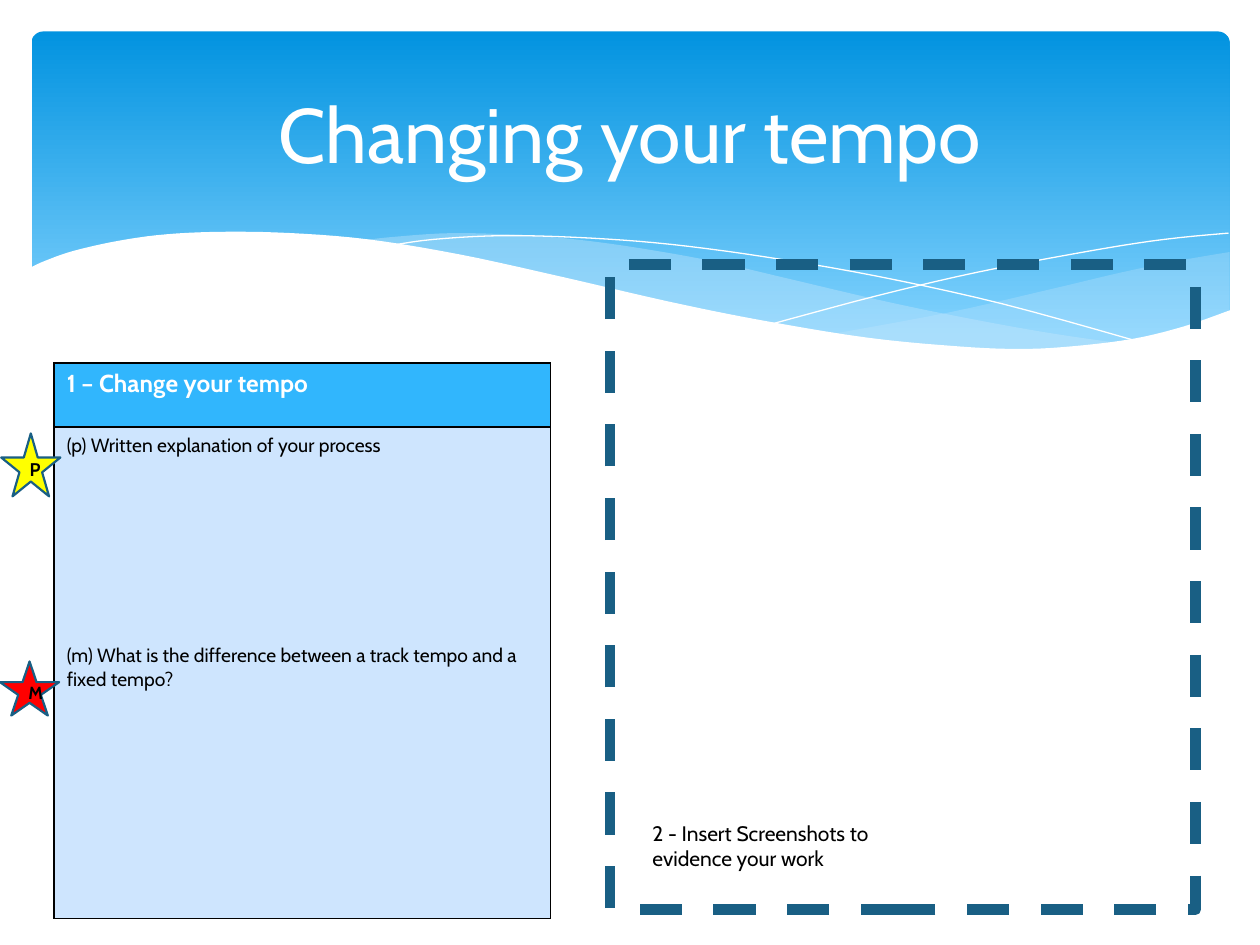
from dataclasses import dataclass
from typing import Optional

from lxml.etree import SubElement
from pptx import Presentation
from pptx.dml.color import RGBColor
from pptx.enum.dml import MSO_LINE
from pptx.enum.shapes import MSO_SHAPE
from pptx.enum.text import MSO_ANCHOR, PP_ALIGN
from pptx.oxml.ns import qn
from pptx.util import Inches, Pt


@dataclass(frozen=True)
class Theme:
    font: str = "Cabin"
    white: str = "FFFFFF"
    black: str = "000000"
    sky_top: str = "0293E0"
    sky_bottom: str = "83D3FE"
    mist: str = "C6E7FC"
    head: str = "31B6FD"
    body: str = "CEE5FE"
    outline: str = "195F84"
    yellow: str = "FFFF00"
    red: str = "FF0000"
    title_size: float = 44
    head_size: float = 14
    note_size: float = 12
    body_size: float = 11


T = Theme()


@dataclass(frozen=True)
class Wave:
    curves: tuple
    fill: Optional[str] = None
    alpha: int = 100


@dataclass(frozen=True)
class Badge:
    label: str
    box: tuple
    fill: str
    size: float


WAVES = (
    Wave((
        ((9.76, 2), (9.35, 2.07), (8.91, 2.16), (8.32, 2.3), (7.53, 2.48), (6.61, 2.65)),
        ((6.61, 2.65), (7.05, 2.71), (7.57, 2.76), (8.14, 2.78), (8.63, 2.75),
         (9.05, 2.69), (9.42, 2.59), (9.76, 2.47)),
    ), T.mist, 29),
    Wave((
        ((8.93, 2.73), (8.37, 2.65), (7.75, 2.54), (7.06, 2.4), (6.29, 2.22), (5.69, 2.08),
         (5.14, 1.98), (4.65, 1.91), (4.2, 1.87), (3.61, 1.85), (3.13, 1.88), (2.86, 1.91)),
        ((2.86, 1.91), (3.42, 1.99), (4.04, 2.11), (4.91, 2.32), (5.66, 2.48), (6.5, 2.64),
         (7.22, 2.74), (7.85, 2.78), (8.38, 2.78), (8.93, 2.73)),
    ), T.mist, 40),
    Wave((((3.09, 1.95), (3.44, 1.9), (4.01, 1.87), (4.69, 1.89), (5.33, 1.94), (6.08, 2.04),
           (6.95, 2.19), (7.95, 2.41), (9.07, 2.72)),)),
    Wave((((6.13, 2.57), (6.95, 2.35), (7.76, 2.16), (8.66, 1.99), (9.24, 1.9), (9.75, 1.85)),)),
    Wave((
        ((9.77, 2.46), (9.4, 2.59), (8.99, 2.69), (8.5, 2.75), (8.09, 2.77), (7.61, 2.75),
         (6.88, 2.68), (6.03, 2.54), (5.29, 2.39), (4.47, 2.2), (3.65, 2.02), (2.92, 1.9),
         (2.3, 1.85), (1.77, 1.84), (1.32, 1.86), (0.95, 1.91), (0.59, 1.99), (0.36, 2.07),
         (0.23, 2.13)),
        ((0.23, 3.29), (9.77, 3.29)),
    ), T.white),
)

BADGES = (
    Badge("M", (0, 5.25, 0.47, 0.43), T.red, 10),
    Badge("P", (0.01, 3.44, 0.47, 0.5), T.yellow, 10.5),
)


def rgb(value: str) -> RGBColor:
    return RGBColor.from_string(value)


def inches(*values: float) -> list:
    return [Inches(v) for v in values]


def format_text(p, size: float, color: str, bold: bool = False) -> None:
    for r in p.runs:
        r.font.name, r.font.size, r.font.bold = T.font, Pt(size), bold
        r.font.color.rgb = rgb(color)


def smooth(pts: tuple, steps: int = 5) -> list:
    out = [pts[0]]
    padded = (pts[0], *pts, pts[-1])
    for a, b, c, d in zip(padded, padded[1:], padded[2:], padded[3:]):
        for i in range(1, steps + 1):
            t = i / steps
            out.append(tuple(
                q + t / 2 * (r - p + t * (2 * p - 5 * q + 4 * r - u + t * (3 * q - p - 3 * r + u)))
                for p, q, r, u in zip(a, b, c, d)))
    return out


def add_wave(s, wave: Wave) -> None:
    pts = [inches(*pt) for curve in wave.curves for pt in smooth(curve)]
    builder = s.shapes.build_freeform(*pts[0])
    builder.add_line_segments(pts[1:], close=wave.fill is not None)
    sp = builder.convert_to_shape()
    sp.shadow.inherit = False
    if wave.fill is None:
        sp.fill.background()
        sp.line.color.rgb = rgb(T.white)
        sp.line.width = Pt(0)
        return
    sp.fill.solid()
    sp.fill.fore_color.rgb = rgb(wave.fill)
    sp.line.fill.background()
    if wave.alpha < 100:
        color = sp.element.spPr.find(qn("a:solidFill"))[0]
        SubElement(color, qn("a:alpha"), val=str(wave.alpha * 1000))


def add_banner(s) -> None:
    sp = s.shapes.add_shape(MSO_SHAPE.ROUNDED_RECTANGLE, *inches(0.25, 0.25, 9.51, 2.7))
    sp.adjustments[0] = 0.034
    sp.shadow.inherit = False
    sp.line.fill.background()
    sp.fill.gradient()
    sp.fill.gradient_angle = 270
    for stop, color, pos in zip(sp.fill.gradient_stops, (T.sky_top, T.sky_bottom), (0, 0.9)):
        stop.color.rgb = rgb(color)
        stop.position = pos


def add_title(s, text: str) -> None:
    title = s.shapes.title
    s.shapes.element.append(title.element)
    title.left, title.top, title.width, title.height = inches(0.5, 0.37, 9, 1.37)
    tf = title.text_frame
    tf.text = text
    tf.vertical_anchor = MSO_ANCHOR.MIDDLE
    p = tf.paragraphs[0]
    p.alignment = PP_ALIGN.CENTER
    format_text(p, T.title_size, T.white)


def style_cell(cell, fill: str) -> None:
    tcPr = cell._tc.get_or_add_tcPr()
    for side in ("a:lnL", "a:lnR", "a:lnT", "a:lnB"):
        ln = SubElement(tcPr, qn(side), w=str(Pt(1)))
        SubElement(SubElement(ln, qn("a:solidFill")), qn("a:srgbClr"), val=T.black)
    cell.fill.solid()
    cell.fill.fore_color.rgb = rgb(fill)


def add_task_table(s, heading: str, questions: tuple) -> None:
    table = s.shapes.add_table(2, 1, *inches(0.43, 2.88, 3.94, 4.41)).table
    for row, height in zip(table.rows, inches(0.51, 3.9)):
        row.height = height
    head, body = table.cell(0, 0), table.cell(1, 0)
    style_cell(head, T.head)
    style_cell(body, T.body)
    head.text_frame.text = heading
    format_text(head.text_frame.paragraphs[0], T.head_size, T.white, True)
    body.text_frame.text = "\n".join(questions)
    for p in body.text_frame.paragraphs:
        format_text(p, T.body_size, T.black)
    body.text_frame.paragraphs[1].space_before = Pt(107)


def add_evidence_area(s, text: str) -> None:
    frame = s.shapes.add_shape(MSO_SHAPE.RECTANGLE, *inches(4.84, 2.1, 4.65, 5.12))
    frame.shadow.inherit = False
    frame.fill.background()
    frame.line.color.rgb = rgb(T.outline)
    frame.line.width = Pt(6)
    frame.line.dash_style = MSO_LINE.DASH
    tf = s.shapes.add_textbox(*inches(5.08, 6.46, 2.36, 0.5)).text_frame
    tf.word_wrap = True
    tf.text = text
    format_text(tf.paragraphs[0], T.note_size, T.black)


def add_badge(s, badge: Badge) -> None:
    sp = s.shapes.add_shape(MSO_SHAPE.STAR_5_POINT, *inches(*badge.box))
    sp.shadow.inherit = False
    sp.fill.solid()
    sp.fill.fore_color.rgb = rgb(badge.fill)
    sp.line.color.rgb = rgb(T.outline)
    sp.line.width = Pt(1.25)
    tf = sp.text_frame
    tf.text = badge.label
    tf.vertical_anchor = MSO_ANCHOR.MIDDLE
    tf.paragraphs[0].alignment = PP_ALIGN.CENTER
    format_text(tf.paragraphs[0], badge.size, T.black, True)


def main() -> None:
    prs = Presentation()
    prs.slide_width, prs.slide_height = inches(10, 7.5)
    s = prs.slides.add_slide(prs.slide_layouts[5])
    add_banner(s)
    for wave in WAVES:
        add_wave(s, wave)
    add_title(s, "Changing your tempo")
    add_task_table(s, "1 – Change your tempo", (
        "(p) Written explanation of your process",
        "(m) What is the difference between a track tempo and a fixed tempo?"))
    add_evidence_area(s, "2 - Insert Screenshots to evidence your work")
    for badge in BADGES:
        add_badge(s, badge)
    prs.save("out.pptx")


if __name__ == "__main__":
    main()
